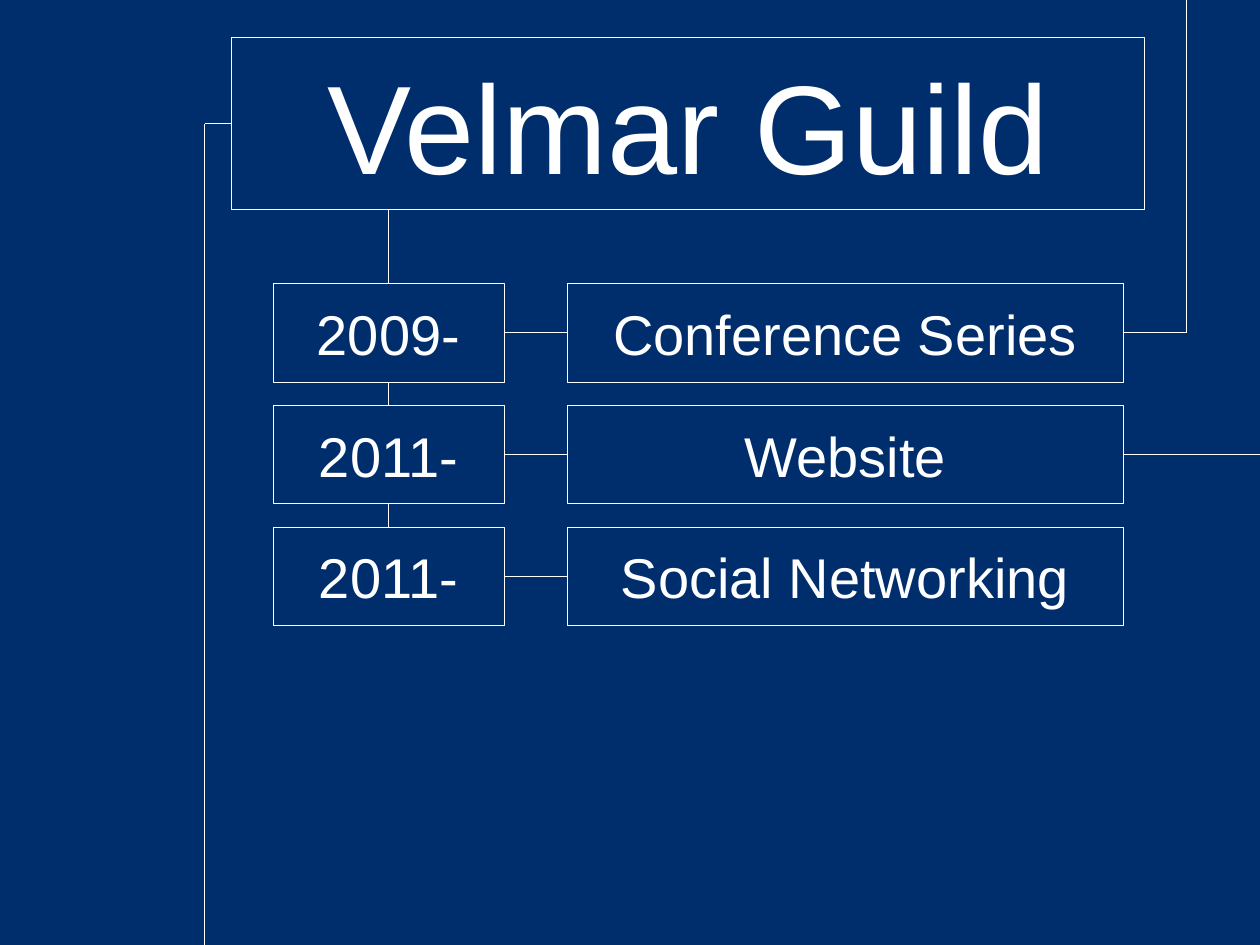
from dataclasses import dataclass

from lxml.etree import SubElement
from pptx import Presentation
from pptx.dml.color import RGBColor
from pptx.enum.shapes import MSO_CONNECTOR, MSO_SHAPE
from pptx.enum.text import MSO_ANCHOR, PP_ALIGN
from pptx.oxml.ns import qn
from pptx.util import Pt

EMU_PER_PX = 7620
SLIDE_WIDTH, SLIDE_HEIGHT = 1200, 900


@dataclass(frozen=True)
class Theme:
    background: RGBColor = RGBColor(0x00, 0x2E, 0x6C)
    ink: RGBColor = RGBColor(0xFF, 0xFF, 0xFF)
    font: str = "Arial"
    title_size: int = 72
    entry_size: int = 32
    line_width: float = 0.5


class Timeline:
    def __init__(self, slide, theme):
        self.slide = slide
        self.theme = theme
        fill = slide.background.fill
        fill.solid()
        fill.fore_color.rgb = theme.background

    def style_line(self, line):
        line.color.rgb = self.theme.ink
        line.width = Pt(self.theme.line_width)

    def box(self, text, size, *bounds):
        panel = self.slide.shapes.add_shape(
            MSO_SHAPE.RECTANGLE, *(value * EMU_PER_PX for value in bounds)
        )
        panel.shadow.inherit = False
        panel.fill.background()
        self.style_line(panel.line)
        frame = panel.text_frame
        frame.text = text
        frame.word_wrap = True
        frame.vertical_anchor = MSO_ANCHOR.MIDDLE
        paragraph = frame.paragraphs[0]
        paragraph.alignment = PP_ALIGN.CENTER
        font = paragraph.runs[0].font
        font.name = self.theme.font
        font.size = Pt(size)
        font.color.rgb = self.theme.ink

    def connect(self, *points):
        for start, end in zip(points, points[1:]):
            link = self.slide.shapes.add_connector(
                MSO_CONNECTOR.STRAIGHT,
                *(value * EMU_PER_PX for value in start + end),
            )
            self.style_line(link.line)
            SubElement(link.element.spPr, qn("a:effectLst"))


def main():
    deck = Presentation()
    deck.slide_width = SLIDE_WIDTH * EMU_PER_PX
    deck.slide_height = SLIDE_HEIGHT * EMU_PER_PX
    theme = Theme()
    timeline = Timeline(deck.slides.add_slide(deck.slide_layouts[6]), theme)

    title_left, title_top, title_width, title_height = 220, 36, 870, 164
    title_middle = title_top + title_height // 2
    timeline.box("Velmar Guild", theme.title_size,
                 title_left, title_top, title_width, title_height)
    timeline.connect((195, SLIDE_HEIGHT), (195, title_middle),
                     (title_left, title_middle))

    year_left, year_width = 260, 220
    activity_left, activity_width = 540, 530
    first_row, row_height, row_pitch = 270, 94, 116
    year_right = year_left + year_width
    year_center = year_left + year_width // 2
    activity_right = activity_left + activity_width
    entries = [
        ("2009-", "Conference Series"),
        ("2011-", "Website"),
        ("2011-", "Social Networking"),
    ]

    above = title_top + title_height
    for row, (year, activity) in enumerate(entries):
        top = first_row + row * row_pitch
        middle = top + row_height // 2
        timeline.box(year, theme.entry_size,
                     year_left, top, year_width, row_height)
        timeline.box(activity, theme.entry_size,
                     activity_left, top, activity_width, row_height)
        timeline.connect((year_center, above), (year_center, top))
        timeline.connect((year_right, middle), (activity_left, middle))
        above = top + row_height

    conference_middle = first_row + row_height // 2
    website_middle = conference_middle + row_pitch
    timeline.connect((activity_right, conference_middle),
                     (1130, conference_middle), (1130, 0))
    timeline.connect((activity_right, website_middle),
                     (SLIDE_WIDTH, website_middle))

    deck.save("out.pptx")


if __name__ == "__main__":
    main()
